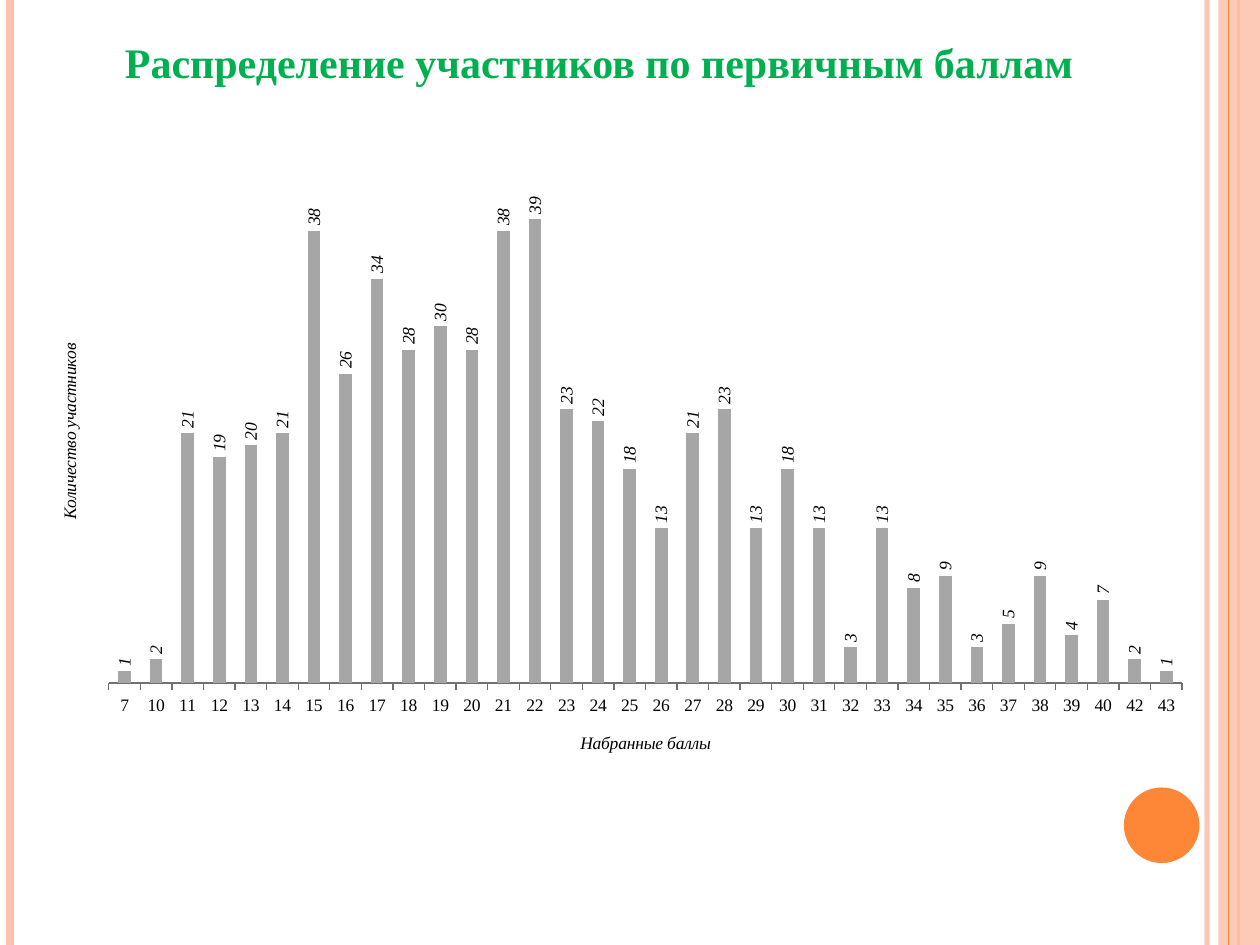
from lxml import etree
from pptx import Presentation
from pptx.chart.data import CategoryChartData
from pptx.dml.color import RGBColor
from pptx.enum.chart import XL_CHART_TYPE, XL_LABEL_POSITION, XL_TICK_MARK
from pptx.enum.shapes import MSO_CONNECTOR, MSO_SHAPE
from pptx.enum.text import MSO_ANCHOR, PP_ALIGN
from pptx.oxml import parse_xml
from pptx.oxml.ns import nsdecls, qn
from pptx.util import Emu, Pt

COLUMNS = XL_CHART_TYPE.COLUMN_CLUSTERED
OUTSIDE_END = XL_LABEL_POSITION.OUTSIDE_END
TICK_OUT = XL_TICK_MARK.OUTSIDE
STRAIGHT = MSO_CONNECTOR.STRAIGHT
CENTER = PP_ALIGN.CENTER
MIDDLE = MSO_ANCHOR.MIDDLE

# Content
TITLE = "Распределение участников по первичным баллам"
SCORE_TITLE = "Набранные баллы"
COUNT_TITLE = "Количество участников"
SCORES = [7, *range(10, 41), 42, 43]
COUNTS = [1, 2, 21, 19, 20, 21, 38, 26, 34, 28, 30, 28, 38, 39, 23, 22, 18,
          13, 21, 23, 13, 18, 13, 3, 13, 8, 9, 3, 5, 9, 4, 7, 2, 1]

# Geometry in px, 100 px to the inch
SCALE = 9144
WIDTH, HEIGHT = 1000, 750
TITLE_BOX = (26, 24, 899, 50)
CHART_BOX = (26, 107, 930, 512)
BAND_BOX = (967, 0, 33, HEIGHT)
CIRCLE_BOX = (892, 625, 60, 60)
PLOT_LAYOUT = {"x": 0.065, "y": 0.02, "w": 0.916, "h": 0.83}

FONT = "Times New Roman"
COLORS = {"peach": "FEC3AE", "orange": "FE8637", "green": "00B050",
          "bar": "A6A6A6", "axis": "707070", "text": "000000"}

# Vertical rules: x, colour, width in points, opacity in percent
BACK_RULES = [(958, "peach", 3, 93), (8, "peach", 4.5, 100),
              (983, "orange", 1.5, 100)]
FRONT_RULES = [(975, "orange", 0.75, 100)]


def emu(box):
    return [Emu(length * SCALE) for length in box]


def color(name):
    return RGBColor.from_string(COLORS[name])


def set_opacity(fill_parent, percent):
    if percent < 100:
        color_element = fill_parent.find(".//" + qn("a:srgbClr"))
        alpha = etree.SubElement(color_element, qn("a:alpha"))
        alpha.set("val", str(percent * 1000))


def style_font(font, size=10, bold=False, italic=False, name="text"):
    font.name = FONT
    font.size = Pt(size)
    font.bold = bold
    font.italic = italic
    font.color.rgb = color(name)


def write_text(text_frame, text, align=CENTER, **font_format):
    paragraph = text_frame.paragraphs[0]
    paragraph.alignment = align
    run = paragraph.add_run()
    run.text = text
    style_font(run.font, **font_format)


def add_rules(slide, rules):
    for x, name, width, opacity in rules:
        begin, end = emu((x, 0)), emu((x, HEIGHT))
        rule = slide.shapes.add_connector(STRAIGHT, *begin, *end)
        rule.line.color.rgb = color(name)
        rule.line.width = Pt(width)
        properties = rule._element.spPr
        set_opacity(properties, opacity)
        etree.SubElement(properties, qn("a:effectLst"))


def add_plain_shape(slide, kind, box, name, opacity=100):
    shape = slide.shapes.add_shape(kind, *emu(box))
    shape.shadow.inherit = False
    shape.fill.solid()
    shape.fill.fore_color.rgb = color(name)
    shape.line.fill.background()
    set_opacity(shape._element.spPr, opacity)


def add_score_chart(slide):
    data = CategoryChartData()
    data.categories = [str(score) for score in SCORES]
    data.add_series("Series 1", COUNTS)
    chart = slide.shapes.add_chart(COLUMNS, *emu(CHART_BOX), data).chart
    chart.has_legend = False
    chart.has_title = False
    chart.font.name = "Cambria"
    chart.font.size = Pt(10)

    # Axes
    score_axis, count_axis = chart.category_axis, chart.value_axis
    for axis, title in ((score_axis, SCORE_TITLE), (count_axis, COUNT_TITLE)):
        axis.has_major_gridlines = False
        write_text(axis.axis_title.text_frame, title, italic=True)
    score_axis.major_tick_mark = TICK_OUT
    score_axis.format.line.color.rgb = color("axis")
    style_font(score_axis.tick_labels.font)
    count_axis.minimum_scale, count_axis.maximum_scale = 0, 45
    count_axis.visible = False
    count_title = count_axis.axis_title.text_frame._txBody
    count_title.find(qn("a:bodyPr")).set("rot", "-5400000")

    # Columns and their upright labels
    plot = chart.plots[0]
    plot.gap_width = 150
    plot.vary_by_categories = False
    series = plot.series[0]
    series.format.fill.solid()
    series.format.fill.fore_color.rgb = color("bar")
    labels = series.data_labels
    labels.show_value = True
    labels.position = OUTSIDE_END
    style_font(labels.font, italic=True)
    label_body = labels._element.find(".//" + qn("a:bodyPr"))
    label_body.set("rot", "-5400000")
    label_body.set("vert", "horz")

    # Fixed inner plot area
    plot_area = chart._chartSpace.chart.plotArea
    for layout in plot_area.findall(qn("c:layout")):
        plot_area.remove(layout)
    places = "".join(f'<c:{key} val="{value}"/>'
                     for key, value in PLOT_LAYOUT.items())
    plot_area.insert(0, parse_xml(
        f'<c:layout {nsdecls("c")}><c:manualLayout>'
        '<c:layoutTarget val="inner"/><c:xMode val="edge"/>'
        f'<c:yMode val="edge"/>{places}</c:manualLayout></c:layout>'))


def main():
    presentation = Presentation()
    presentation.slide_width, presentation.slide_height = emu((WIDTH, HEIGHT))
    slide = presentation.slides.add_slide(presentation.slide_layouts[5])

    # Side decoration
    add_rules(slide, BACK_RULES)
    add_plain_shape(slide, MSO_SHAPE.RECTANGLE, BAND_BOX, "peach", 87)
    add_rules(slide, FRONT_RULES)
    add_plain_shape(slide, MSO_SHAPE.OVAL, CIRCLE_BOX, "orange")

    # Title
    title = slide.shapes.title
    title.left, title.top, title.width, title.height = emu(TITLE_BOX)
    title.text_frame.vertical_anchor = MIDDLE
    title.text_frame.word_wrap = True
    write_text(title.text_frame, TITLE, size=24, bold=True, name="green")

    add_score_chart(slide)
    presentation.save("out.pptx")


if __name__ == "__main__":
    main()
